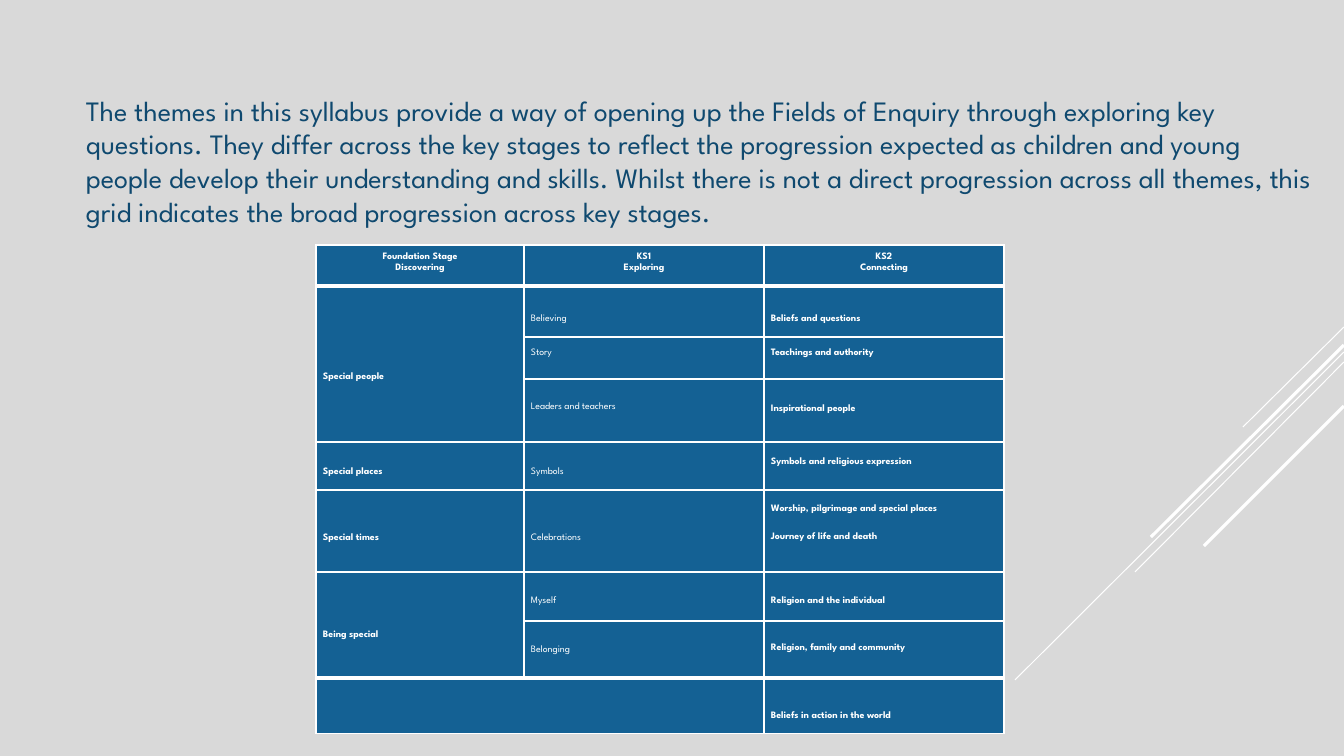
import pptx
import pptx.util
import pptx.dml.color
import pptx.enum.shapes
import pptx.enum.text
import pptx.oxml.ns
from lxml import etree

PX = 914400 / 100.8
FONT = "League Spartan"
COLORS = {"background": "D9D9D9", "white": "FFFFFF", "cell": "146194", "intro": "0F496F"}


def px(length):
    return pptx.util.Emu(round(length * PX))


def add_span(para, text, size, color, bold=False):
    span = para.add_run()
    span.text = text
    span.font.name = FONT
    span.font.size = pptx.util.Pt(size)
    span.font.bold = bold
    span.font.color.rgb = pptx.dml.color.RGBColor.from_string(COLORS[color])


deck = pptx.Presentation()
deck.slide_width, deck.slide_height = px(1344), px(756)
slide = deck.slides.add_slide(deck.slide_layouts[6])
background = slide.background.fill
background.solid()
background.fore_color.rgb = pptx.dml.color.RGBColor.from_string(COLORS["background"])

stripes = [
    (327, 1243, 427, 0.75),
    (352, 1015, 680, 0.75),
    (362, 1135, 572, 0.75),
    (345, 1151, 537, 2.25),
    (406, 1204, 546, 2.25),
]
for start_y, end_x, end_y, weight in stripes:
    stripe = slide.shapes.add_connector(
        pptx.enum.shapes.MSO_CONNECTOR.STRAIGHT, px(1344), px(start_y), px(end_x), px(end_y))
    stripe.line.width = pptx.util.Pt(weight)
    stripe.line.color.rgb = pptx.dml.color.RGBColor.from_string(COLORS["white"])
    etree.SubElement(stripe._element.spPr, pptx.oxml.ns.qn("a:effectLst"))

intro = slide.shapes.add_textbox(px(76), px(76), px(1248), px(169))
intro.text_frame.word_wrap = True
intro.text_frame.vertical_anchor = pptx.enum.text.MSO_ANCHOR.MIDDLE
intro_para = intro.text_frame.paragraphs[0]
intro_para.line_spacing = pptx.util.Pt(24)
add_span(
    intro_para,
    "The themes in this syllabus provide a way of opening up the Fields of Enquiry "
    "through exploring key questions. They differ across the key stages to reflect the "
    "progression expected as children and young people develop their understanding and "
    "skills. Whilst there is not a direct progression across all themes, this grid "
    "indicates the broad progression across key stages.",
    20, "intro")

column_widths = [208, 240, 240]
row_heights = [41, 51, 42, 63, 48, 82, 49, 57, 56]
table = slide.shapes.add_table(
    len(row_heights), len(column_widths), px(316), px(245),
    px(sum(column_widths)), px(sum(row_heights))).table
for column, width in zip(table.columns, column_widths):
    column.width = px(width)
for row, height in zip(table.rows, row_heights):
    row.height = px(height)

last_row = len(row_heights) - 1
for row in range(len(row_heights)):
    for column in range(len(column_widths)):
        cell = table.cell(row, column)
        cell.margin_left = cell.margin_right = cell.margin_top = cell.margin_bottom = 0
        properties = cell._tc.get_or_add_tcPr()
        for side in "LRTB":
            thick = (row, side) in [(0, "B"), (1, "T"), (last_row - 1, "B"), (last_row, "T")]
            border = etree.SubElement(properties, pptx.oxml.ns.qn("a:ln" + side))
            border.set("w", str(pptx.util.Pt(3 if thick else 1)))
            paint = etree.SubElement(border, pptx.oxml.ns.qn("a:solidFill"))
            etree.SubElement(paint, pptx.oxml.ns.qn("a:srgbClr")).set("val", COLORS["white"])
        cell.fill.solid()
        cell.fill.fore_color.rgb = pptx.dml.color.RGBColor.from_string(COLORS["cell"])

for first, last in [((1, 0), (3, 0)), ((6, 0), (7, 0)), ((8, 0), (8, 1))]:
    table.cell(*first).merge(table.cell(*last))

headers = [("Foundation Stage", "Discovering"), ("KS1", "Exploring"), ("KS2", "Connecting")]
themes = [
    (1, 0, 87, ["Special people"]),
    (4, 0, 26, ["Special places"]),
    (5, 0, 44, ["Special times"]),
    (6, 0, 59, ["Being special"]),
    (1, 1, 29, ["Believing"]),
    (2, 1, 12, ["Story"]),
    (3, 1, 24, ["Leaders and teachers"]),
    (4, 1, 26, ["Symbols"]),
    (5, 1, 44, ["Celebrations"]),
    (6, 1, 25, ["Myself"]),
    (7, 1, 25, ["Belonging"]),
    (1, 2, 29, ["Beliefs and questions"]),
    (2, 2, 12, ["Teachings and authority"]),
    (3, 2, 26, ["Inspirational people"]),
    (4, 2, 16, ["Symbols and religious expression"]),
    (5, 2, 15, ["Worship, pilgrimage and special places", "Journey of life and death"]),
    (6, 2, 25, ["Religion and the individual"]),
    (7, 2, 23, ["Religion, family and community"]),
    (8, 2, 34, ["Beliefs in action in the world"]),
]
entries = [(0, column, 8, lines) for column, lines in enumerate(headers)] + themes
for row, column, top, lines in entries:
    cell = table.cell(row, column)
    cell.margin_top = px(top)
    cell.margin_left = px(0 if row == 0 else 7)
    for number, line in enumerate(lines):
        frame = cell.text_frame
        para = frame.add_paragraph() if number else frame.paragraphs[0]
        if row == 0:
            para.alignment = pptx.enum.text.PP_ALIGN.CENTER
            para.space_before = pptx.util.Pt(number)
        elif number:
            para.space_before = pptx.util.Pt(13.5)
        add_span(para, line, 7, "white", bold=row == 0 or column != 1)

deck.save("out.pptx")
